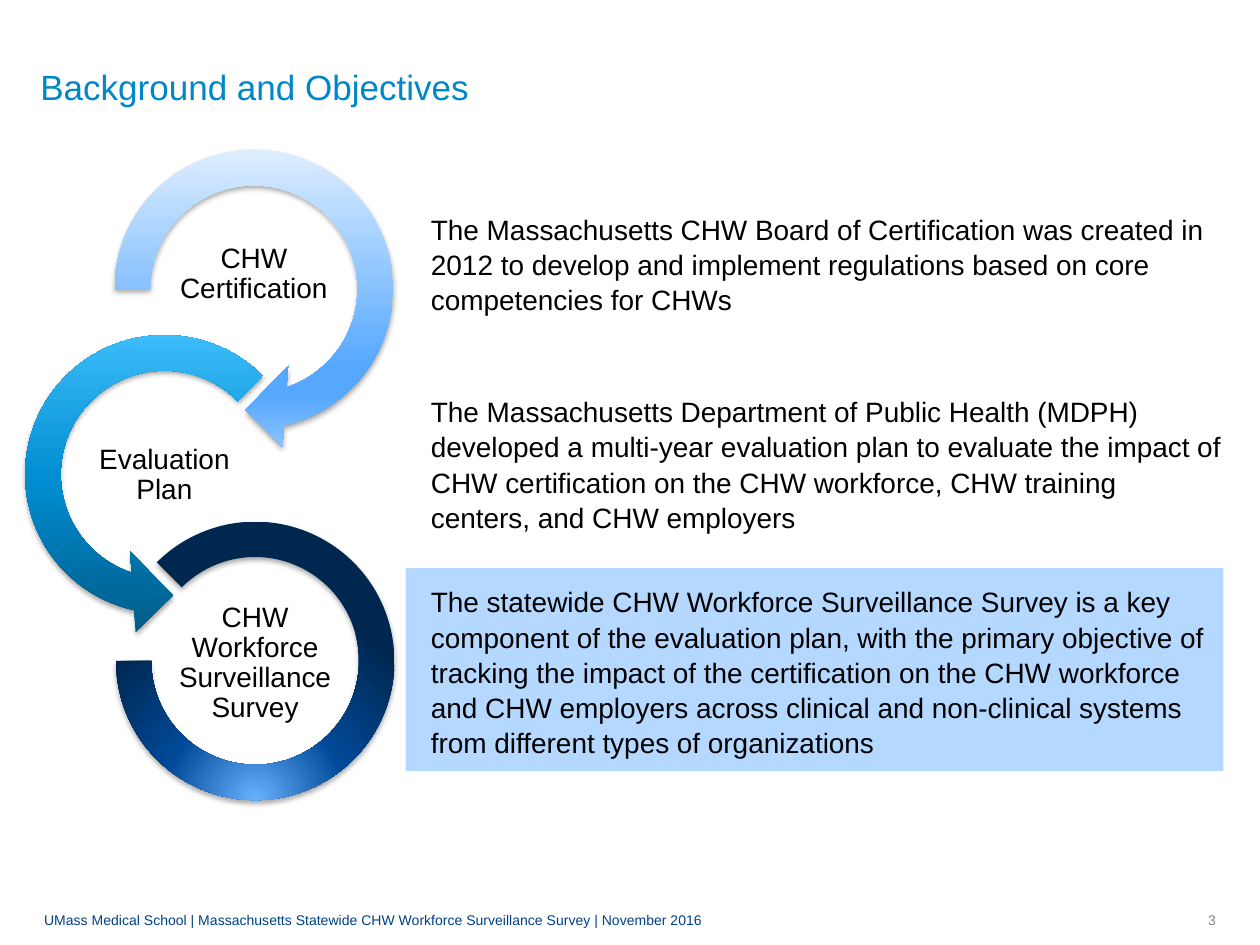
from lxml.etree import SubElement
from pptx import Presentation
from pptx.dml.color import RGBColor
from pptx.enum.shapes import MSO_SHAPE as Shape
from pptx.enum.text import MSO_ANCHOR as Anchor, PP_ALIGN as Align
from pptx.oxml import parse_xml
from pptx.oxml.ns import nsdecls, qn
from pptx.util import Inches, Pt

BLACK = RGBColor(0x00, 0x00, 0x00)
SKY = RGBColor(0x00, 0x87, 0xC8)
NAVY = RGBColor(0x00, 0x41, 0x86)
GRAY = RGBColor(0x92, 0x85, 0x80)
PALE = RGBColor(0xB4, 0xD8, 0xFF)

TITLE = "Background and Objectives"
FOOTER = ("UMass Medical School | Massachusetts Statewide CHW Workforce "
          "Surveillance Survey | November 2016")
NUMBER = "3"

LIGHT = [(0, "ECF5FF"), (74, "56A8FF"), (83, "56A8FF"), (100, "8EC5FF")]
TEAL = [(0, "005A86"), (48, "008DD1"), (100, "45C3FF")]
DEEP = [(0, "69B2FF"), (46, "004A99"), (100, "002750")]
LINEAR = '<a:lin ang="{}" scaled="0"/>'
RADIAL = ('<a:path path="circle"><a:fillToRect l="50000" t="130000" '
          'r="50000" b="-30000"/></a:path>')

RINGS = [
    (Shape.CIRCULAR_ARROW, (0.73, 1.01, 2.57), (0.11, 11.423, 45, 108, 0.125),
     LIGHT, LINEAR.format(90 * 60000)),
    (Shape.LEFT_CIRCULAR_ARROW, (0.02, 2.48, 2.57), (0.11, 11.423, 63, 189, 0.125),
     TEAL, LINEAR.format(270 * 60000)),
    (Shape.BLOCK_ARC, (0.92, 4.14, 2.21), (135, 108, 0.127), DEEP, RADIAL),
]
LABELS = [
    ("CHW Certification", 1.3, 1.93, Anchor.TOP),
    ("Evaluation Plan", 0.59, 3.42, Anchor.MIDDLE),
    ("CHW Workforce Surveillance Survey", 1.31, 4.91, Anchor.MIDDLE),
]
NOTES = [
    ("The Massachusetts CHW Board of Certification was created in 2012 to develop "
     "and implement regulations based on core competencies for CHWs", 1.67, 1.11),
    ("The Massachusetts Department of Public Health (MDPH) developed a multi-year "
     "evaluation plan to evaluate the impact of CHW certification on the CHW "
     "workforce, CHW training centers, and CHW employers", 3.12, 1.11),
    ("The statewide CHW Workforce Surveillance Survey is a key component of the "
     "evaluation plan, with the primary objective of tracking the impact of the "
     "certification on the CHW workforce and CHW employers across clinical and "
     "non-clinical systems from different types of organizations", 4.63, 1.49),
]
LEFT, WIDE = 3.22, 6.49


def write(box, text, size, color, anchor=Anchor.TOP, align=Align.LEFT,
          inset=(0, 0, 0, 0), pitch=None):
    frame = box.text_frame
    frame.word_wrap = True
    frame.vertical_anchor = anchor
    (frame.margin_left, frame.margin_top,
     frame.margin_right, frame.margin_bottom) = map(Inches, inset)
    frame.text = text
    para = frame.paragraphs[0]
    para.alignment = align
    para.line_spacing = pitch
    para.font.name = "Arial"
    para.font.size = Pt(size)
    para.font.color.rgb = color


def text_at(slide, place, *args, **kwargs):
    box = slide.shapes.add_textbox(*map(Inches, place))
    write(box, *args, **kwargs)


def add_ring(slide, kind, place, adjust, stops, course):
    left, top, side = map(Inches, place)
    ring = slide.shapes.add_shape(kind, left, top, side, side)
    for i, value in enumerate(adjust):
        ring.adjustments[i] = value
    ring.line.fill.background()
    ring.shadow.inherit = False
    colors = "".join(f'<a:gs pos="{at * 1000}"><a:srgbClr val="{color}"/></a:gs>'
                     for at, color in stops)
    props = ring.element.spPr
    props.find(qn("a:prstGeom")).addnext(parse_xml(
        f'<a:gradFill {nsdecls("a")} rotWithShape="1"><a:gsLst>{colors}</a:gsLst>'
        f'{course}</a:gradFill>'))
    shade = SubElement(props.find(qn("a:effectLst")), qn("a:outerShdw"),
                       blurRad=str(Pt(3.1)), dist=str(Pt(1.8)),
                       dir=str(90 * 60000), rotWithShape="0")
    tint = SubElement(shade, qn("a:srgbClr"), val="000000")
    SubElement(tint, qn("a:alpha"), val="35000")


def main():
    deck = Presentation()
    deck.slide_width, deck.slide_height = Inches(10), Inches(7.5)
    slide = deck.slides.add_slide(deck.slide_layouts[5])

    title = slide.shapes.title
    title.left, title.top, title.width, title.height = map(
        Inches, (0.32, 0.43, 9.07, 0.42))
    write(title, TITLE, 20, SKY, Anchor.BOTTOM)

    panel = slide.shapes.add_shape(
        Shape.RECTANGLE, *map(Inches, (LEFT, 4.51, WIDE, 1.61)))
    panel.fill.solid()
    panel.fill.fore_color.rgb = PALE
    panel.line.fill.background()
    panel.shadow.inherit = False

    for ring in RINGS:
        add_ring(slide, *ring)
    for text, left, top, anchor in LABELS:
        text_at(slide, (left, top, 1.43, 0.71), text, 16, BLACK, anchor,
                Align.CENTER, (0.01,) * 4, 0.9)
    for text, top, high in NOTES:
        text_at(slide, (LEFT, top, WIDE, high), text, 16, BLACK,
                inset=(0.2, 0, 0, 0), pitch=1.05)

    text_at(slide, (0.35, 7.22, 7.72, 0.16), FOOTER, 8, NAVY, Anchor.MIDDLE)
    text_at(slide, (8.23, 7.22, 1.42, 0.16), NUMBER, 8, GRAY, Anchor.MIDDLE,
            Align.RIGHT)
    deck.save("out.pptx")


if __name__ == "__main__":
    main()
